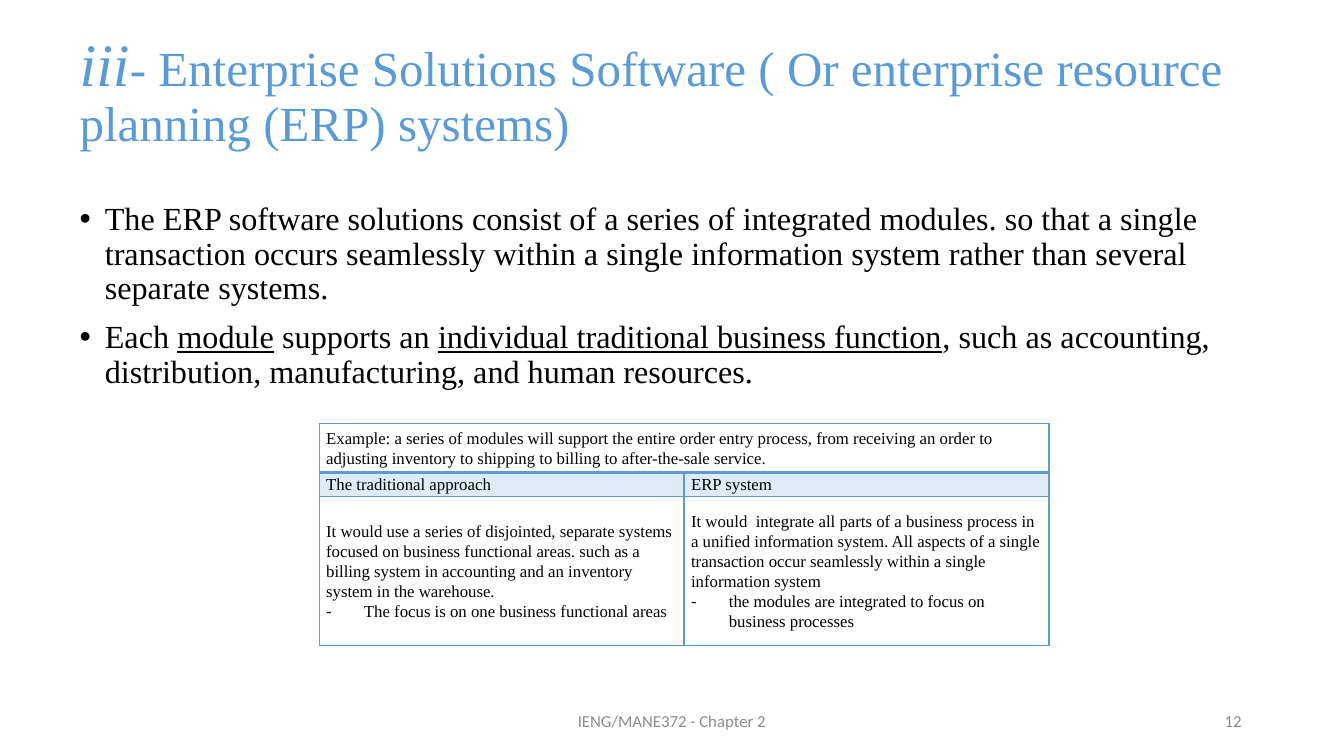
from dataclasses import dataclass

from lxml.etree import SubElement
from pptx import Presentation
from pptx.dml.color import RGBColor
from pptx.enum.text import MSO_ANCHOR, MSO_AUTO_SIZE, PP_ALIGN
from pptx.oxml import parse_xml
from pptx.oxml.ns import nsdecls, qn
from pptx.util import Pt


@dataclass(frozen=True)
class Theme:
    serif: str = "Times New Roman"
    sans: str = "Calibri"
    accent: str = "5B9BD5"
    tint: str = "DEEBF7"
    white: str = "FFFFFF"
    ink: str = "000000"
    muted: str = "8C8C8C"
    numeral_size: int = 43
    title_size: int = 35
    body_size: int = 23
    small_size: int = 12


def add_text(p, text, font, size, color, italic=False, underline=False):
    r = p.add_run()
    r.text = text
    r.font.name = font
    r.font.size = Pt(size)
    r.font.color.rgb = RGBColor.from_string(color)
    r.font.italic = italic
    r.font.underline = underline


def set_bullet(p, char, indent):
    """Give the paragraph a hanging bullet; indent is in points."""
    pPr = p._p.get_or_add_pPr()
    pPr.set("marL", str(Pt(indent)))
    pPr.set("indent", str(-Pt(indent)))
    SubElement(pPr, qn("a:buFont"), typeface="Arial")
    SubElement(pPr, qn("a:buChar"), char=char)


def set_borders(cell, color, **widths):
    """Draw cell borders; widths are points keyed by L, R, T and B."""
    tcPr = cell._tc.get_or_add_tcPr()
    for i, (side, width) in enumerate(widths.items()):
        tcPr.insert(i, parse_xml(
            f'<a:ln{side} {nsdecls("a")} w="{Pt(width)}"><a:solidFill>'
            f'<a:srgbClr val="{color}"/></a:solidFill></a:ln{side}>'))


class SlideBuilder:
    def __init__(self, prs, theme):
        self.theme = theme
        self.s = prs.slides.add_slide(prs.slide_layouts[1])

    def place(self, sp, left, top, width, height, anchor=MSO_ANCHOR.TOP):
        sp.left, sp.top, sp.width, sp.height = map(Pt, (left, top, width, height))
        tf = sp.text_frame
        tf.word_wrap = True
        tf.auto_size = MSO_AUTO_SIZE.NONE
        tf.vertical_anchor = anchor
        return tf

    def title(self, numeral, text, *box):
        t = self.theme
        p = self.place(self.s.shapes.title, *box).paragraphs[0]
        p.alignment = PP_ALIGN.LEFT
        p.line_spacing = 0.9
        p.space_before = Pt(0)
        add_text(p, numeral, t.serif, t.numeral_size, t.accent, italic=True)
        add_text(p, text, t.serif, t.title_size, t.accent)

    def bullets(self, items, *box):
        """Fill the body; each item is a list of (text, underlined) pairs."""
        t = self.theme
        tf = self.place(self.s.placeholders[1], *box)
        for i, parts in enumerate(items):
            p = tf.add_paragraph() if i else tf.paragraphs[0]
            p.line_spacing = 0.9
            p.space_before = Pt(10 if i else 0)
            set_bullet(p, "•", 18)
            for text, underlined in parts:
                add_text(p, text, t.serif, t.body_size, t.ink, underline=underlined)

    def footer(self, text, align, *box):
        t = self.theme
        sp = self.s.shapes.add_textbox(0, 0, 0, 0)
        p = self.place(sp, *box, anchor=MSO_ANCHOR.MIDDLE).paragraphs[0]
        p.alignment = align
        add_text(p, text, t.sans, t.small_size, t.muted)

    def cell(self, cell, text, point=None, fill=None, bottom=1, top=1):
        t = self.theme
        cell.fill.solid()
        cell.fill.fore_color.rgb = RGBColor.from_string(fill or t.white)
        set_borders(cell, t.accent, L=1, R=1, T=top, B=bottom)
        cell.margin_left = cell.margin_right = Pt(5)
        cell.margin_top = cell.margin_bottom = 0
        cell.vertical_anchor = MSO_ANCHOR.MIDDLE
        tf = cell.text_frame
        p = tf.paragraphs[0]
        p.line_spacing = 1.07
        add_text(p, text, t.serif, t.small_size, t.ink)
        if point:
            p = tf.add_paragraph()
            p.line_spacing = 1.07
            set_bullet(p, "-", 27)
            add_text(p, point, t.serif, t.small_size, t.ink)

    def comparison(self, heading, columns, row_heights, left, top, width):
        """Add a table: a merged heading over (name, text, point) columns."""
        frame = self.s.shapes.add_table(
            len(row_heights), len(columns), Pt(left), Pt(top),
            Pt(width), Pt(sum(row_heights)))
        table = frame.table
        table.first_row = table.horz_banding = False
        for row, height in zip(table.rows, row_heights):
            row.height = Pt(height)
        table.cell(0, 0).merge(table.cell(0, len(columns) - 1))
        self.cell(table.cell(0, 0), heading, bottom=2.25)
        for c, (name, text, point) in enumerate(columns):
            self.cell(table.cell(1, c), name, fill=self.theme.tint, top=2.25)
            self.cell(table.cell(2, c), text, point)


def main():
    prs = Presentation()
    prs.slide_width, prs.slide_height = Pt(960), Pt(540)
    slide = SlideBuilder(prs, Theme())
    slide.title(
        "iii",
        "- Enterprise Solutions Software ( Or enterprise resource planning (ERP) systems)",
        49.7, 21, 861, 96)
    slide.bullets([
        [("The ERP software solutions consist of a series of integrated modules. "
          "so that a single transaction occurs seamlessly within a single "
          "information system rather than several separate systems.", False)],
        [("Each ", False), ("module", True), (" supports an ", False),
         ("individual traditional business function", True),
         (", such as accounting, distribution, manufacturing, and human resources.",
          False)],
    ], 49.7, 141, 861, 141)
    slide.comparison(
        "Example: a series of modules will support the entire order entry process, "
        "from receiving an order to adjusting inventory to shipping to billing to "
        "after-the-sale service.",
        [("The traditional approach",
          "It would use a series of disjointed, separate systems focused on business "
          "functional areas. such as a billing system in accounting and an inventory "
          "system in the warehouse.",
          "The focus is on one business functional areas"),
         ("ERP system",
          "It would  integrate all parts of a business process in a unified "
          "information system. All aspects of a single transaction occur seamlessly "
          "within a single information system",
          "the modules are integrated to focus on business processes")],
        (34.9, 17.5, 106.5), 228, 302.4, 521.3)
    slide.footer("IENG/MANE372 - Chapter 2", PP_ALIGN.CENTER, 318, 500.5, 324, 28.8)
    slide.footer("12", PP_ALIGN.RIGHT, 678, 500.5, 216, 28.8)
    prs.save("out.pptx")


if __name__ == "__main__":
    main()
